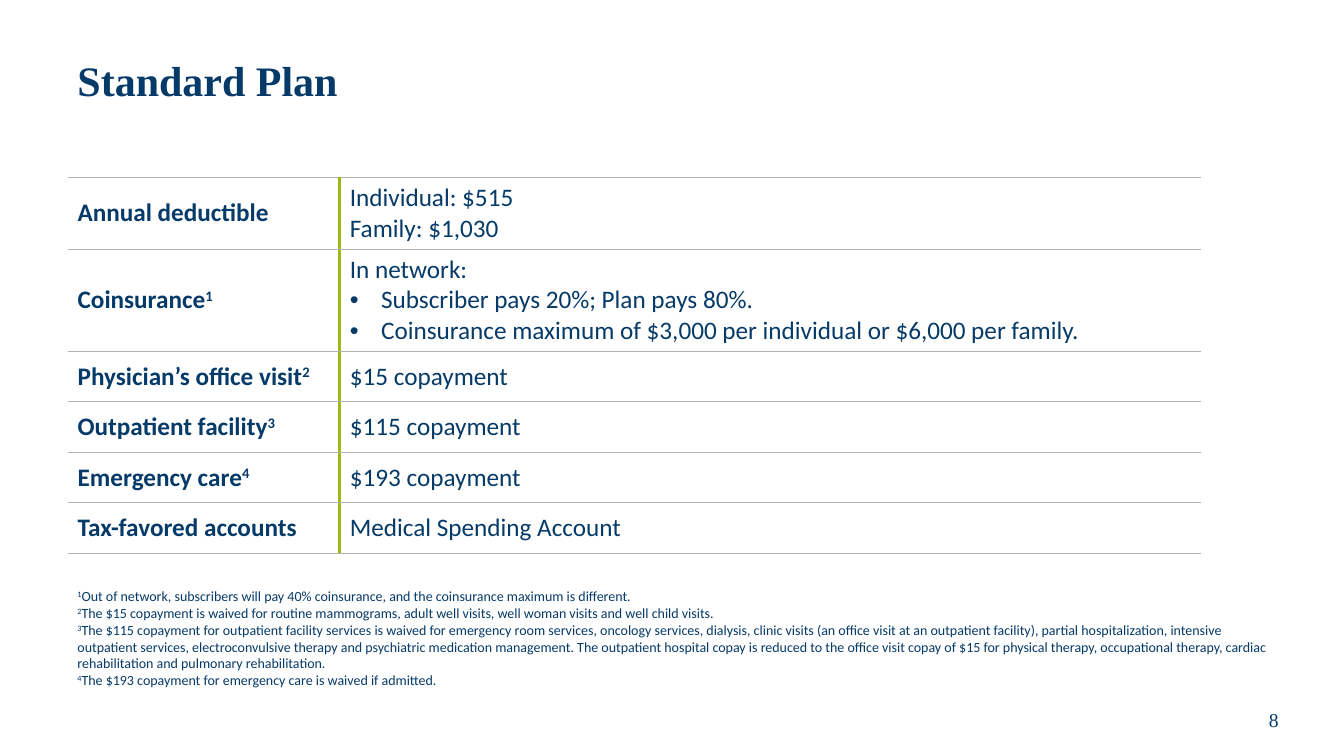
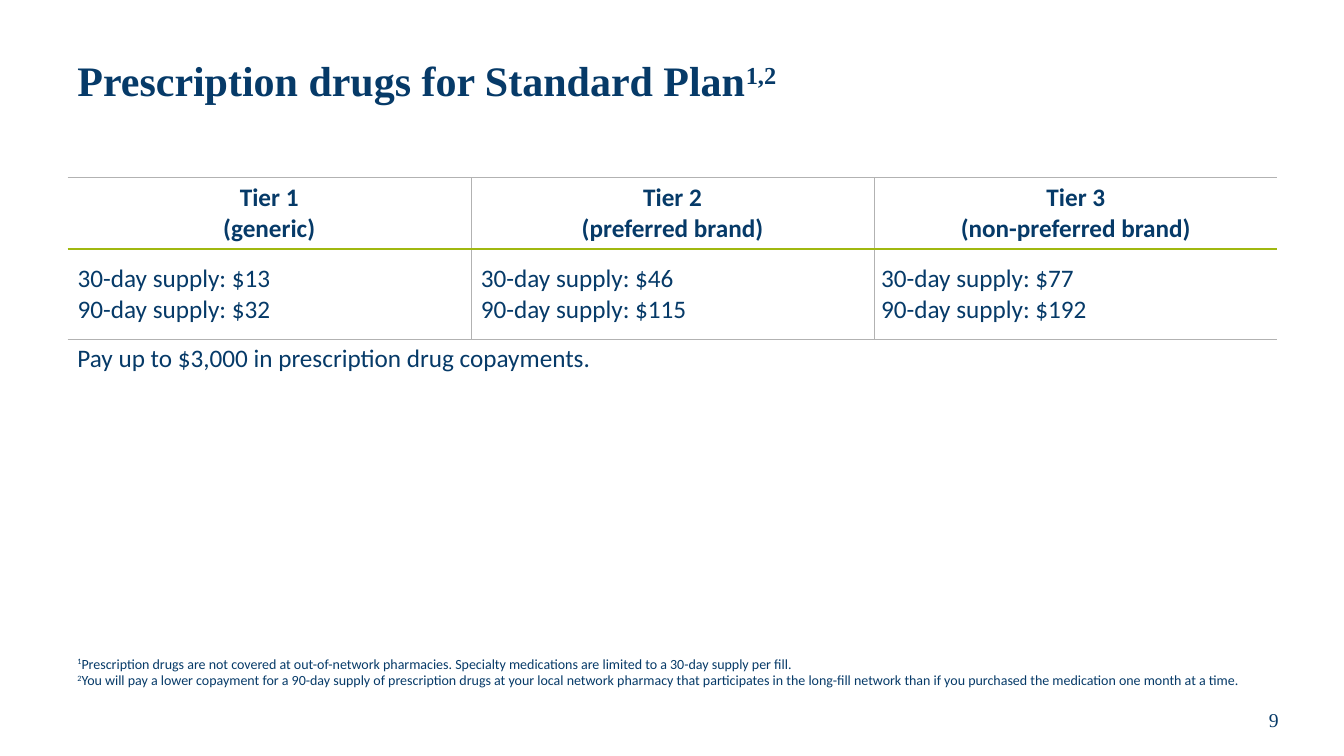
from lxml import etree
from pptx import Presentation
from pptx.dml.color import RGBColor
from pptx.enum.text import MSO_ANCHOR, MSO_AUTO_SIZE, PP_ALIGN
from pptx.oxml.ns import qn
from pptx.util import Inches, Pt

MIDDLE, TOP = MSO_ANCHOR.MIDDLE, MSO_ANCHOR.TOP
LEFT, CENTER = PP_ALIGN.LEFT, PP_ALIGN.CENTER
FIXED, GROW = MSO_AUTO_SIZE.NONE, MSO_AUTO_SIZE.SHAPE_TO_FIT_TEXT

NAVY = RGBColor(0x06, 0x3A, 0x68)
GREEN = RGBColor(0xA0, 0xB8, 0x10)
GRAY = RGBColor(0xB2, 0xB2, 0xB2)

THIN = (GRAY, 0.5)
THICK = (GREEN, 2.25)
MARGIN = 0.67
BULLET_INDENT = Inches(0.31)

TITLE = {"name": "Times New Roman", "size": Pt(30), "bold": True}
BODY = {"name": "Calibri", "size": Pt(18), "bold": False}
HEADING = {**BODY, "bold": True}
NOTE = {**BODY, "size": Pt(10)}
PAGE_NUMBER = {"name": "Times New Roman", "size": Pt(14), "bold": False}

SLIDES = [
    {
        "title": "Standard Plan",
        "number": "8",
        "columns": [2.7, 8.54],
        "heights": [0.71, 1.01, 0.5, 0.5, 0.5, 0.5],
        "headings": "column",
        "rows": [
            [["Annual deductible"], ["Individual: $515", "Family: $1,030"]],
            [["Coinsurance^1"], [
                "In network:",
                "•Subscriber pays 20%; Plan pays 80%.",
                "•Coinsurance maximum of $3,000 per individual or $6,000 per family.",
            ]],
            [["Physician’s office visit^2"], ["$15 copayment"]],
            [["Outpatient facility^3"], ["$115 copayment"]],
            [["Emergency care^4"], ["$193 copayment"]],
            [["Tax-favored accounts"], ["Medical Spending Account"]],
        ],
        "notes_at": (MARGIN, 5.78, 12, 1.11),
        "notes": [
            "^1^Out of network, subscribers will pay 40% coinsurance, and the coinsurance "
            "maximum is different.",
            "^2^The $15 copayment is waived for routine mammograms, adult well visits, "
            "well woman visits and well child visits.",
            "^3^The $115 copayment for outpatient facility services is waived for emergency "
            "room services, oncology services, dialysis, clinic visits (an office visit at an "
            "outpatient facility), partial hospitalization, intensive outpatient services, "
            "electroconvulsive therapy and psychiatric medication management. The outpatient "
            "hospital copay is reduced to the office visit copay of $15 for physical therapy, "
            "occupational therapy, cardiac rehabilitation and pulmonary rehabilitation.",
            "^4^The $193 copayment for emergency care is waived if admitted.",
        ],
        "remark": None,
    },
    {
        "title": "Prescription drugs for Standard Plan^1,2",
        "number": "9",
        "columns": [4, 4, 4],
        "heights": [0.71, 0.9],
        "headings": "row",
        "rows": [
            [["Tier 1\n(generic)"], ["Tier 2\n(preferred brand)"],
             ["Tier 3\n(non-preferred brand)"]],
            [["30-day supply: $13", "90-day supply: $32"],
             ["30-day supply: $46", "90-day supply: $115"],
             ["30-day supply: $77", "90-day supply: $192"]],
        ],
        "notes_at": (MARGIN, 6.45, 12, 0.44),
        "notes": [
            "^1^Prescription drugs are not covered at out-of-network pharmacies. Specialty "
            "medications are limited to a 30-day supply per fill.",
            "^2^You will pay a lower copayment for a 90-day supply of prescription drugs at "
            "your local network pharmacy that participates in the long-fill network than if you "
            "purchased the medication one month at a time.",
        ],
        "remark": "Pay up to $3,000 in prescription drug copayments.",
    },
]


def write_text(frame, lines, font_format, alignment=LEFT):
    for index, line in enumerate(lines):
        paragraph = frame.add_paragraph() if index else frame.paragraphs[0]
        paragraph.alignment = alignment
        if line.startswith("•"):
            properties = paragraph._p.get_or_add_pPr()
            properties.set("marL", str(BULLET_INDENT))
            properties.set("indent", str(-BULLET_INDENT))
            etree.SubElement(properties, qn("a:buFont"), typeface="Arial")
            etree.SubElement(properties, qn("a:buChar"), char="•")
        for position, part in enumerate(line.lstrip("•").split("^")):
            for row, text in enumerate(part.split("\n")):
                if row:
                    paragraph.add_line_break()
                if not text:
                    continue
                run = paragraph.add_run()
                run.text = text
                run.font.color.rgb = NAVY
                for name, value in font_format.items():
                    setattr(run.font, name, value)
                if position % 2:
                    run._r.get_or_add_rPr().set("baseline", "30000")


def set_borders(cell, borders):
    properties = cell._tc.get_or_add_tcPr()
    for index, (side, border) in enumerate(borders.items()):
        line = etree.Element(qn(f"a:ln{side}"))
        if border:
            color, width = border
            line.set("w", str(Pt(width)))
            fill = etree.SubElement(line, qn("a:solidFill"))
            etree.SubElement(fill, qn("a:srgbClr"), val=str(color))
        else:
            etree.SubElement(line, qn("a:noFill"))
        properties.insert(index, line)


presentation = Presentation()
presentation.slide_width = Inches(13.33)
presentation.slide_height = Inches(7.5)

for content in SLIDES:
    slide = presentation.slides.add_slide(presentation.slide_layouts[6])
    columns, heights = content["columns"], content["heights"]
    by_column = content["headings"] == "column"

    table = slide.shapes.add_table(
        len(heights), len(columns), Inches(MARGIN), Inches(1.76),
        Inches(sum(columns)), Inches(sum(heights)),
    ).table
    table.first_row = False
    table.horz_banding = False
    for column, width in zip(table.columns, columns):
        column.width = Inches(width)
    for row, height in zip(table.rows, heights):
        row.height = Inches(height)

    inner_vertical = THICK if by_column else THIN
    horizontals = [THIN] * (len(heights) + 1)
    if not by_column:
        horizontals[1] = THICK
    for row_index, row in enumerate(content["rows"]):
        for column_index, lines in enumerate(row):
            cell = table.cell(row_index, column_index)
            cell.vertical_anchor = MIDDLE
            cell.fill.background()
            is_heading = (column_index if by_column else row_index) == 0
            write_text(
                cell.text_frame, lines, HEADING if is_heading else BODY,
                CENTER if is_heading and not by_column else LEFT,
            )
            if column_index == 2 and not is_heading:
                cell.margin_left = cell.margin_right = Inches(0.07)
            set_borders(cell, {
                "L": inner_vertical if column_index else None,
                "R": inner_vertical if column_index < len(columns) - 1 else None,
                "T": horizontals[row_index],
                "B": horizontals[row_index + 1],
            })

    boxes = [
        ((MARGIN, 0.25, 12, 1.15), [content["title"]], TITLE, LEFT, MIDDLE, FIXED),
        (content["notes_at"], content["notes"], NOTE, LEFT, TOP, GROW),
        ((12.05, 6.89, 1.17, 0.5), [content["number"]], PAGE_NUMBER, CENTER, MIDDLE, FIXED),
    ]
    if content["remark"]:
        boxes.append(((MARGIN, 3.35, 9, 0.4), [content["remark"]], BODY, LEFT, TOP, GROW))
    for place, lines, font_format, alignment, anchor, sizing in boxes:
        frame = slide.shapes.add_textbox(*map(Inches, place)).text_frame
        frame.word_wrap = True
        frame.vertical_anchor = anchor
        frame.auto_size = sizing
        write_text(frame, lines, font_format, alignment)
        if font_format is TITLE:
            frame.paragraphs[0].line_spacing = 0.9

presentation.save("out.pptx")
